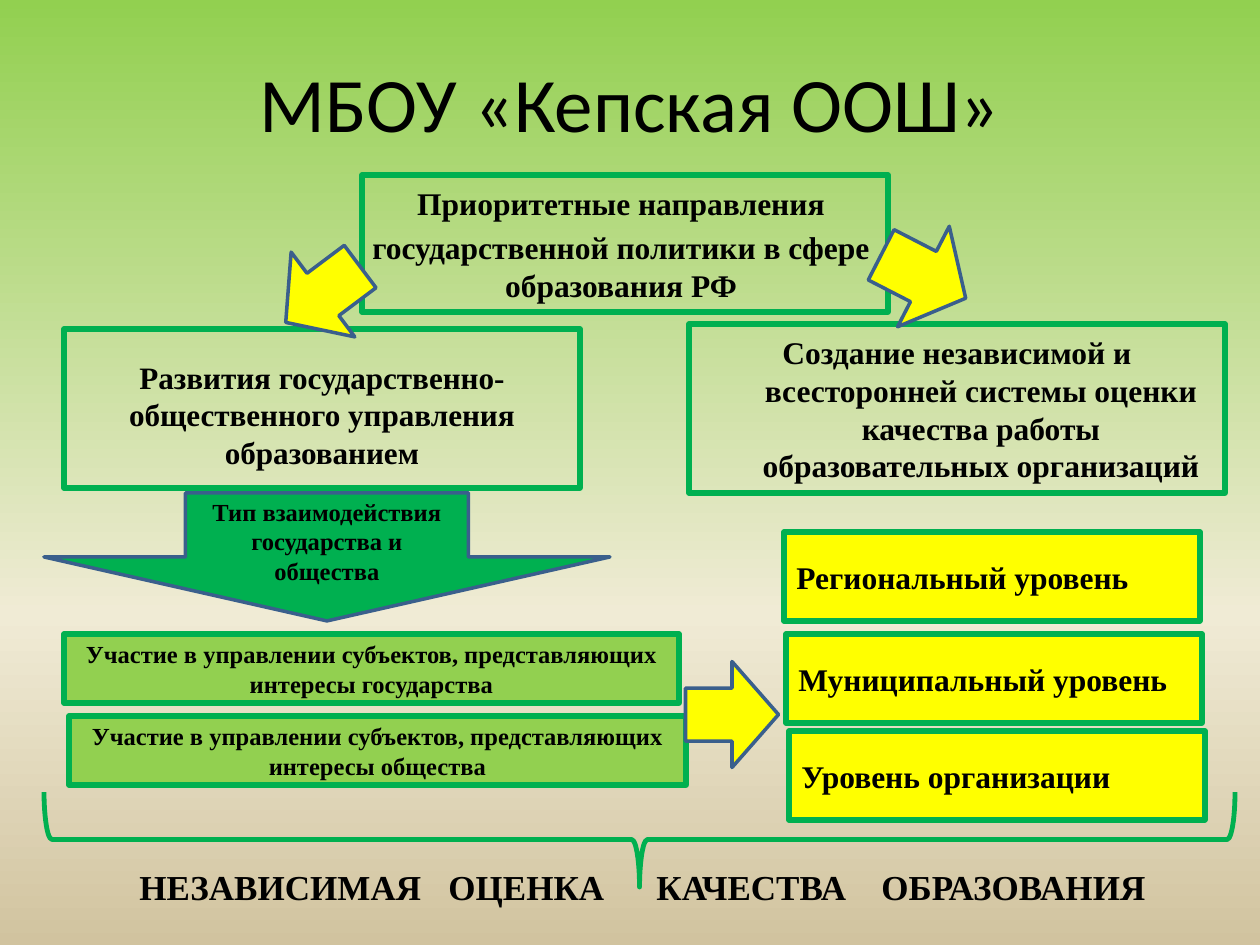
from copy import deepcopy

from lxml import etree
from pptx import Presentation
from pptx import util as u
from pptx.dml.color import RGBColor
from pptx.enum import shapes, text
from pptx.oxml.ns import qn

PX = 914400 / 126
GREEN, LIME, YELLOW, NAVY, BLACK = "00B050", "92D050", "FFFF00", "3A5F8C", "000000"
SERIF = "Times New Roman"
SHAPE = shapes.MSO_SHAPE
CENTER, LEFT = text.PP_ALIGN.CENTER, text.PP_ALIGN.LEFT
MIDDLE, TOP, BOTTOM = text.MSO_ANCHOR.MIDDLE, text.MSO_ANCHOR.TOP, text.MSO_ANCHOR.BOTTOM


def px(n):
    return u.Emu(round(n * PX))


def rgb(color):
    return RGBColor.from_string(color)


def set_background(s, stops):
    """Fill the slide with a top-to-bottom gradient of (position, colour) stops."""
    fill = s.background.fill
    fill.gradient()
    fill.gradient_angle = 270
    gs_list = s.element.find(".//" + qn("a:gsLst"))
    while len(gs_list) < len(stops):
        gs_list.append(deepcopy(gs_list[0]))
    for stop, (position, color) in zip(fill.gradient_stops, stops):
        stop.position = position
        stop.color.rgb = rgb(color)


def write(sp, paragraphs, size, font=SERIF, bold=True, align=CENTER, anchor=MIDDLE, before=0):
    tf = sp.text_frame
    tf.word_wrap = True
    tf.vertical_anchor = anchor
    for i, line in enumerate(paragraphs):
        p = tf.add_paragraph() if i else tf.paragraphs[0]
        p.alignment = align
        p.space_before = u.Pt(before)
        r = p.add_run()
        r.text = line
        r.font.size, r.font.name, r.font.bold = u.Pt(size), font, bold
        r.font.color.rgb = rgb(BLACK)
    return tf


def add_text(s, box, paragraphs, size, **style):
    return write(s.shapes.add_textbox(*map(px, box)), paragraphs, size, **style)


def add_figure(s, kind, box, fill=None, line=GREEN, width=3, rotation=0):
    sp = s.shapes.add_shape(kind, *map(px, box))
    sp.shadow.inherit = False
    sp.rotation = rotation
    if fill:
        sp.fill.solid()
        sp.fill.fore_color.rgb = rgb(fill)
    else:
        sp.fill.background()
    sp.line.color.rgb = rgb(line)
    sp.line.width = u.Pt(width)
    return sp


def add_box(s, box, label, size, fill=None, **style):
    return write(add_figure(s, SHAPE.RECTANGLE, box, fill), [label], size, **style)


def add_arrow(s, box, fill=YELLOW, rotation=0):
    return add_figure(s, SHAPE.DOWN_ARROW, box, fill, NAVY, 2, rotation)


def set_hanging(p, n):
    p_pr = p._p.get_or_add_pPr()
    p_pr.set("marL", str(px(n)))
    p_pr.set("indent", str(-px(n)))


def set_tabs(p, stops):
    tabs = etree.SubElement(p._p.get_or_add_pPr(), qn("a:tabLst"))
    for stop in stops:
        etree.SubElement(tabs, qn("a:tab"), pos=str(px(stop)), algn="l")


def add_policy(s):
    tf = add_text(s, (333, 151, 576, 169),
                  ["Приоритетные направления",
                   "государственной политики в сфере образования РФ"],
                  18, anchor=BOTTOM, before=3.6)
    tf.margin_bottom = px(16)
    add_figure(s, SHAPE.RECTANGLE, (362, 175, 526, 137))


def add_directions(s):
    tf = add_box(s, (64, 329, 516, 159),
                 "Развития государственно-общественного управления образованием",
                 17.8, before=3.6)
    tf.margin_top = px(18)
    tf = add_box(s, (689, 324, 536, 169),
                 "Создание независимой и всесторонней системы оценки "
                 "качества работы образовательных организаций", 18, before=3.6)
    set_hanging(tf.paragraphs[0], 48)


def add_participation(s):
    arrow = add_arrow(s, (44, 493, 566, 128), GREEN)
    write(arrow, ["Тип взаимодействия государства и общества"], 14)
    for x, y, w, party in ((64, 634, 615, "государства"), (69, 716, 617, "общества")):
        add_box(s, (x, y, w, 69),
                f"Участие в управлении субъектов, представляющих интересы {party}", 14, LIME)


def add_levels(s):
    for x, y, label in ((784, 532, "Региональный уровень"),
                        (786, 634, "Муниципальный уровень"),
                        (789, 731, "Уровень организации")):
        add_box(s, (x, y, 416, 89), label, 18, YELLOW, align=LEFT)


def add_conclusion(s):
    tf = add_text(s, (127, 859, 1116, 86),
                  ["НЕЗАВИСИМАЯ\tОЦЕНКА\tКАЧЕСТВА\tОБРАЗОВАНИЯ"],
                  20, align=LEFT, anchor=TOP, before=4)
    set_tabs(tf.paragraphs[0], (309, 517, 742))
    add_figure(s, SHAPE.RIGHT_BRACE, (592, 244, 95, 1191), width=2.75, rotation=90)


def main():
    prs = Presentation()
    prs.slide_width, prs.slide_height = px(1260), px(945)
    s = prs.slides.add_slide(prs.slide_layouts[6])
    set_background(s, ((0, LIME), (0.65, "F0EBD5"), (1, "D1C39F")))
    add_text(s, (63, 38, 1134, 127), ["МБОУ «Кепская ООШ»"], 44, font="Calibri", bold=False)
    add_policy(s)
    add_directions(s)
    add_participation(s)
    add_levels(s)
    for box, rotation in (((270, 248, 106, 93), 53.1),
                          ((867, 229, 113, 95), 297.2),
                          ((679, 668, 106, 93), 270)):
        add_arrow(s, box, rotation=rotation)
    add_conclusion(s)
    prs.save("out.pptx")


if __name__ == "__main__":
    main()
